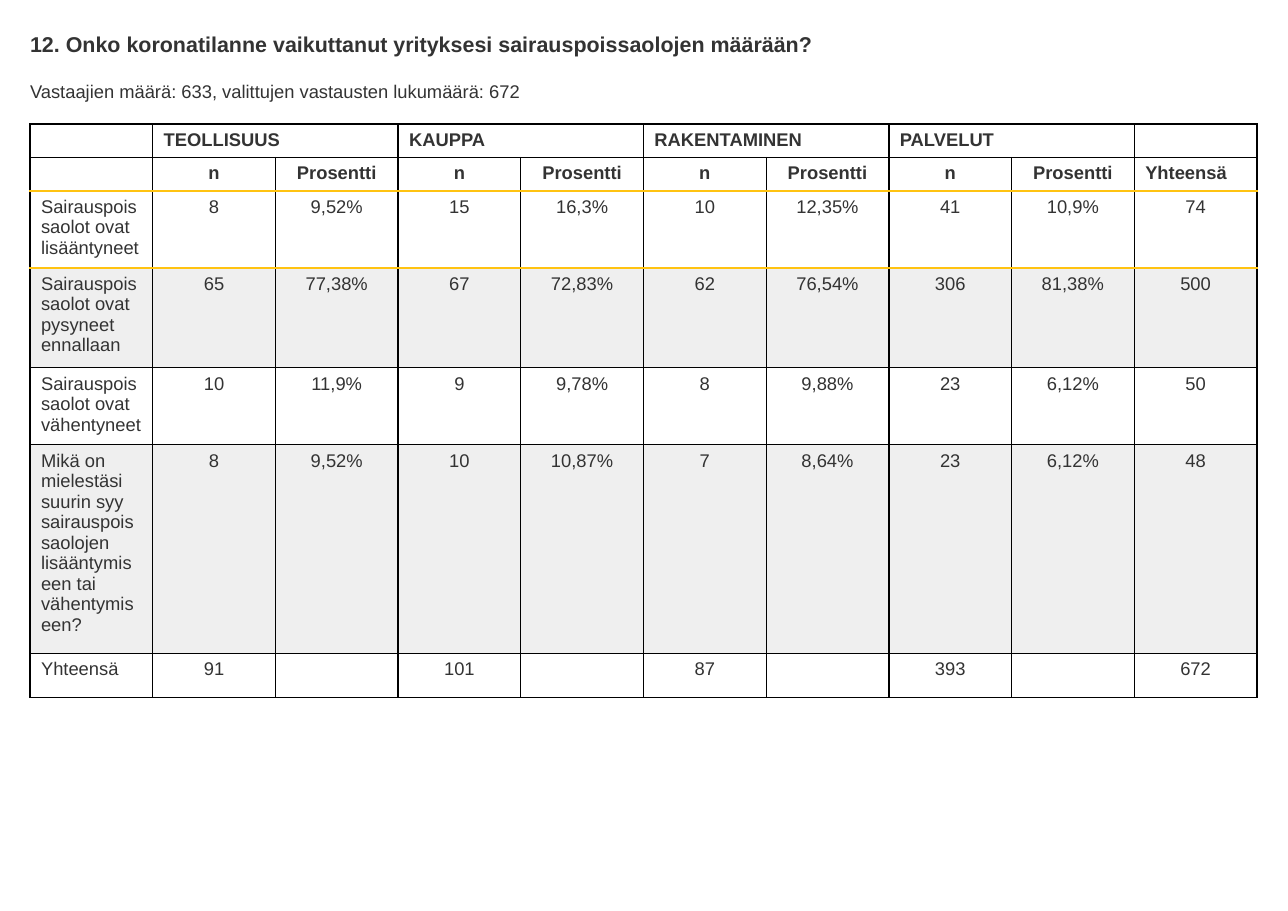
import lxml.etree
import pptx
import pptx.dml.color
import pptx.enum.text
import pptx.oxml.ns
import pptx.util

PX = 8298
HUES = {"ink": "333333", "line": "000000", "gold": "FFC311", "band": "EFEFEF", "plain": "FFFFFF"}
ALIGN = pptx.enum.text.PP_ALIGN
FRAME = {"margin_left": 0, "margin_right": 0, "margin_top": 0, "margin_bottom": 0,
         "word_wrap": True, "auto_size": pptx.enum.text.MSO_AUTO_SIZE.NONE,
         "vertical_anchor": pptx.enum.text.MSO_ANCHOR.TOP}
HEADS = ["TEOLLISUUS", "KAUPPA", "RAKENTAMINEN", "PALVELUT"]
ROWS = [
    [""] + [text for head in HEADS for text in (head, "")] + [""],
    [""] + ["n", "Prosentti"] * len(HEADS) + ["Yhteensä"],
    ["Sairauspoissaolot ovat lisääntyneet",
     "8", "9,52%", "15", "16,3%", "10", "12,35%", "41", "10,9%", "74"],
    ["Sairauspoissaolot ovat pysyneet ennallaan",
     "65", "77,38%", "67", "72,83%", "62", "76,54%", "306", "81,38%", "500"],
    ["Sairauspoissaolot ovat vähentyneet",
     "10", "11,9%", "9", "9,78%", "8", "9,88%", "23", "6,12%", "50"],
    ["Mikä on mielestäsi suurin syy sairauspoissaolojen lisääntymiseen tai vähentymiseen?",
     "8", "9,52%", "10", "10,87%", "7", "8,64%", "23", "6,12%", "48"],
    ["Yhteensä", "91", "", "101", "", "87", "", "393", "", "672"],
]
HIGHS = [33, 33, 77, 100, 77, 209, 44]
GOLD = {(1, "B"), (2, "T"), (2, "B"), (3, "T")}


def tint(name):
    """Return the named colour."""
    return pptx.dml.color.RGBColor.from_string(HUES[name])


def put(item, values):
    """Set every attribute in values on item."""
    for name, value in values.items():
        setattr(item, name, value)


def write(frame, text, size=12, bold=False, align=ALIGN.LEFT):
    """Write one formatted paragraph in a text frame."""
    para = frame.paragraphs[0]
    para.alignment = align
    if text:
        run = para.add_run()
        run.text = text
        put(run.font, {"name": "Arial", "size": pptx.util.Pt(size), "bold": bold})
        run.font.color.rgb = tint("ink")
    else:
        para._p.get_or_add_endParaRPr().set("sz", str(size * 100))


def place(shape, box, text, size, bold):
    """Fit a shape to its box and write its line of text."""
    put(shape, dict(zip(("left", "top", "width", "height"), (n * PX for n in box))))
    put(shape.text_frame, FRAME)
    write(shape.text_frame, text, size, bold)


def heading(slide, box):
    """Place the title with the note on answers beneath it."""
    left, top, width, high = box
    title = "12. Onko koronatilanne vaikuttanut yrityksesi sairauspoissaolojen määrään?"
    place(slide.shapes.title, (left, top, width, 25), title, 14, True)
    note = slide.shapes.add_textbox(0, 0, 0, 0)
    place(note, (left, top + high - 22, width, 22),
          "Vastaajien määrä: 633, valittujen vastausten lukumäärä: 672", 12, False)


def edge(cell, row):
    """Draw the four borders of a cell."""
    props = cell._tc.get_or_add_tcPr()
    for side in "LRTB":
        gold = (row, side) in GOLD
        line = lxml.etree.SubElement(props, pptx.oxml.ns.qn(f"a:ln{side}"))
        line.set("w", str(pptx.util.Pt(2 if gold else 1)))
        fill = lxml.etree.SubElement(line, pptx.oxml.ns.qn("a:solidFill"))
        hue = lxml.etree.SubElement(fill, pptx.oxml.ns.qn("a:srgbClr"))
        hue.set("val", HUES["gold" if gold else "line"])


def grid(slide, box):
    """Place the table of answers by sector."""
    left, top, width, high = (n * PX for n in box)
    count = len(ROWS[0])
    table = slide.shapes.add_table(len(ROWS), count, left, top, width, high).table
    put(table, {"first_row": False, "horz_banding": False})
    for column in table.columns:
        column.width = width // count
    for r, texts in enumerate(ROWS):
        table.rows[r].height = HIGHS[r] * PX
        for c, text in enumerate(texts):
            cell = table.cell(r, c)
            flush = r == 0 or c == 0 or (r == 1 and c == count - 1)
            write(cell.text_frame, text, bold=r < 2,
                  align=ALIGN.LEFT if flush else ALIGN.CENTER)
            edge(cell, r)
            cell.fill.solid()
            cell.fill.fore_color.rgb = tint("band" if r in (3, 5) else "plain")
    for c in range(1, count - 1, 2):
        table.cell(0, c).merge(table.cell(0, c + 1))


def main():
    """Build and save the slide."""
    deck = pptx.Presentation()
    put(deck, {"slide_width": 1288 * PX, "slide_height": 911 * PX})
    slide = deck.slides.add_slide(deck.slide_layouts[5])
    heading(slide, (30, 31, 1228, 71))
    grid(slide, (30, 124, 1227, sum(HIGHS)))
    deck.save("out.pptx")


if __name__ == "__main__":
    main()
